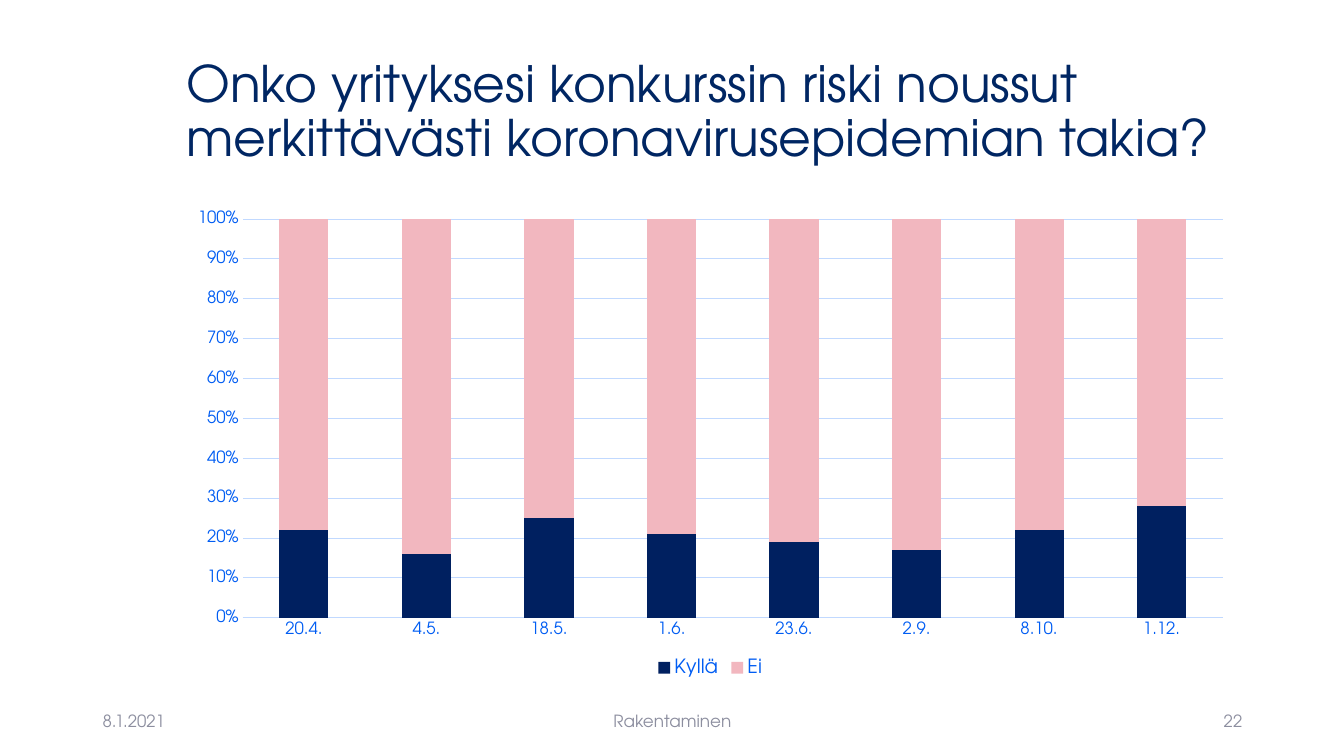
from dataclasses import dataclass

import pptx
import pptx.chart.data
import pptx.dml.color
import pptx.enum.chart
import pptx.enum.text
import pptx.util

Inches = pptx.util.Inches
Align = pptx.enum.text.PP_ALIGN


@dataclass(frozen=True)
class Theme:
    font: str = "TeX Gyre Adventor"
    title: str = "002663"
    foot: str = "8C8E9F"
    label: str = "005DF3"
    grid: str = "C1D9FF"
    yes: str = "002060"
    no: str = "F2B7BF"
    title_size: int = 36
    foot_size: int = 12
    axis_size: int = 12
    key_size: int = 14


@dataclass(frozen=True)
class Foot:
    text: str
    left: float
    width: float
    align: Align


@dataclass(frozen=True)
class Series:
    name: str
    values: tuple[int, ...]
    color: str


THEME = Theme()

FEET = (
    Foot("8.1.2021", 0.92, 3, Align.LEFT),
    Foot("Rakentaminen", 4.42, 4.5, Align.CENTER),
    Foot("22", 9.42, 3, Align.RIGHT),
)

DATES = ("20.4.", "4.5.", "18.5.", "1.6.", "23.6.", "2.9.", "8.10.", "1.12.")
YES = (22, 16, 25, 21, 19, 17, 22, 28)
SERIES = (
    Series("Kyllä", YES, THEME.yes),
    Series("Ei", tuple(100 - value for value in YES), THEME.no),
)


def rgb(color: str) -> pptx.dml.color.RGBColor:
    return pptx.dml.color.RGBColor.from_string(color)


def style(font, size: int, color: str) -> None:
    font.name = THEME.font
    font.size = pptx.util.Pt(size)
    font.color.rgb = rgb(color)


def add_text(slide, text: str, *, left: float, top: float, width: float,
             height: float, size: int, color: str,
             align: Align = Align.LEFT, spacing: float = 1.0) -> None:
    box = slide.shapes.add_textbox(
        Inches(left), Inches(top), Inches(width), Inches(height))
    frame = box.text_frame
    frame.word_wrap = True
    frame.vertical_anchor = pptx.enum.text.MSO_ANCHOR.MIDDLE
    para = frame.paragraphs[0]
    para.alignment = align
    para.line_spacing = spacing
    run = para.add_run()
    run.text = text
    style(run.font, size, color)


def draw_line(line) -> None:
    line.color.rgb = rgb(THEME.grid)
    line.width = pptx.util.Pt(0.75)


def add_chart(slide) -> None:
    data = pptx.chart.data.CategoryChartData()
    data.categories = DATES
    for item in SERIES:
        data.add_series(item.name, item.values)
    chart = slide.shapes.add_chart(
        pptx.enum.chart.XL_CHART_TYPE.COLUMN_STACKED_100,
        Inches(1.75), Inches(2), Inches(10.59), Inches(4.76), data).chart
    chart.has_title = False
    style(chart.font, 10, THEME.title)

    # Columns
    plot = chart.plots[0]
    plot.gap_width = 150
    plot.overlap = 100
    plot.vary_by_categories = False
    for series, item in zip(plot.series, SERIES):
        series.format.fill.solid()
        series.format.fill.fore_color.rgb = rgb(item.color)

    # Axes
    for axis in (chart.category_axis, chart.value_axis):
        axis.major_tick_mark = pptx.enum.chart.XL_TICK_MARK.NONE
        axis.minor_tick_mark = pptx.enum.chart.XL_TICK_MARK.NONE
        style(axis.tick_labels.font, THEME.axis_size, THEME.label)
    draw_line(chart.category_axis.format.line)
    scale = chart.value_axis
    scale.minimum_scale = 0
    scale.maximum_scale = 1
    scale.major_unit = 0.1
    scale.format.line.fill.background()
    draw_line(scale.major_gridlines.format.line)
    scale.tick_labels.number_format = "0%"
    scale.tick_labels.number_format_is_linked = False

    # Legend
    chart.has_legend = True
    chart.legend.position = pptx.enum.chart.XL_LEGEND_POSITION.BOTTOM
    chart.legend.include_in_layout = False
    style(chart.legend.font, THEME.key_size, THEME.label)


def main() -> None:
    deck = pptx.Presentation()
    deck.slide_width = Inches(13.33)
    deck.slide_height = Inches(7.5)
    slide = deck.slides.add_slide(deck.slide_layouts[6])

    # Title
    add_text(slide, "Onko yrityksesi konkurssin riski noussut "
             "merkittävästi koronavirusepidemian takia?",
             left=1.75, top=0.4, width=10.59, height=1.45,
             size=THEME.title_size, color=THEME.title, spacing=0.9)

    # Chart
    add_chart(slide)

    # Footer
    for foot in FEET:
        add_text(slide, foot.text, left=foot.left, top=6.95,
                 width=foot.width, height=0.4, size=THEME.foot_size,
                 color=THEME.foot, align=foot.align)

    deck.save("out.pptx")


if __name__ == "__main__":
    main()
